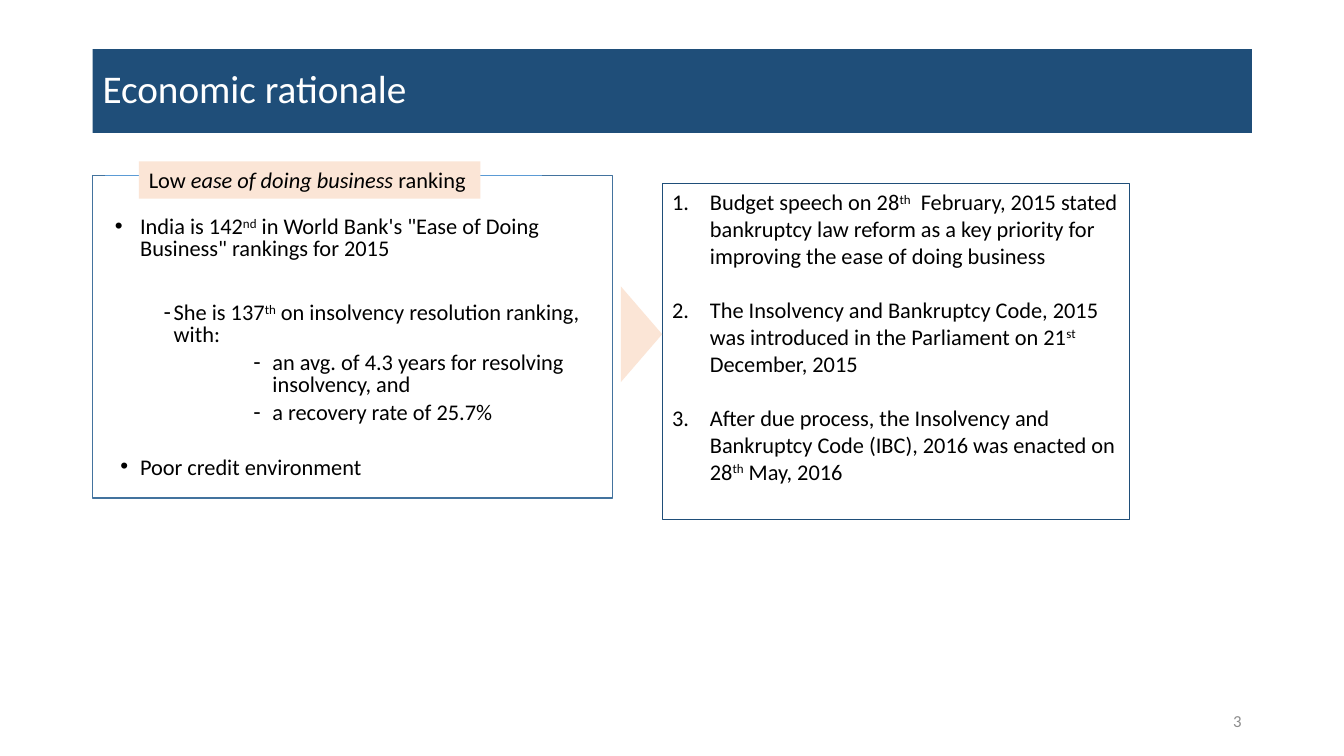
import pptx
import pptx.util
import pptx.dml.color
import pptx.enum.shapes
import pptx.enum.text
import lxml.etree
from dataclasses import dataclass

Pt = pptx.util.Pt
SHAPES = pptx.enum.shapes.MSO_SHAPE
ALIGN = pptx.enum.text.PP_ALIGN
ANCHOR = pptx.enum.text.MSO_ANCHOR


@dataclass(frozen=True)
class Theme:
    font: str = "Calibri"
    navy: str = "1F4E79"
    panel_line: str = "43739E"
    rule: str = "5B9BD5"
    peach: str = "FBE5D6"
    white: str = "FFFFFF"
    black: str = "000000"
    gray: str = "8C8C8C"
    title_size: float = 28
    body_size: float = 16
    number_size: float = 12


theme = Theme()
rgb = pptx.dml.color.RGBColor.from_string
qn = pptx.oxml.ns.qn


def add_box(left, top, width, height, kind=SHAPES.RECTANGLE, fill=None, line=None, weight=1):
    shape = slide.shapes.add_shape(kind, Pt(left), Pt(top), Pt(width), Pt(height))
    shape.shadow.inherit = False
    if fill:
        shape.fill.solid()
        shape.fill.fore_color.rgb = rgb(fill)
    else:
        shape.fill.background()
    if line:
        shape.line.color.rgb = rgb(line)
        shape.line.width = Pt(weight)
    else:
        shape.line.fill.background()
    return shape


def write(shape, paragraphs, size=theme.body_size, color=theme.black, anchor=ANCHOR.TOP, spacing=1.0):
    frame = shape.text_frame
    frame.word_wrap = True
    frame.vertical_anchor = anchor
    for index, (bullet, margin, hanging, before, pieces) in enumerate(paragraphs):
        paragraph = frame.paragraphs[0] if index == 0 else frame.add_paragraph()
        paragraph.alignment = ALIGN.LEFT
        paragraph.line_spacing = spacing
        paragraph.space_before = Pt(before)
        if bullet:
            properties = paragraph._p.get_or_add_pPr()
            properties.set("marL", str(Pt(margin)))
            properties.set("indent", str(-Pt(hanging)))
            if bullet == "1.":
                lxml.etree.SubElement(properties, qn("a:buAutoNum"), type="arabicPeriod")
            else:
                lxml.etree.SubElement(properties, qn("a:buFont"), typeface="Arial")
                lxml.etree.SubElement(properties, qn("a:buChar"), char=bullet)
        for text, style in pieces:
            run = paragraph.add_run()
            run.text = text
            run.font.name = theme.font
            run.font.size = Pt(size)
            run.font.color.rgb = rgb(color)
            if style == "italic":
                run.font.italic = True
            elif style == "superscript":
                run._r.get_or_add_rPr().set("baseline", "30000")


presentation = pptx.Presentation()
presentation.slide_width = Pt(960)
presentation.slide_height = Pt(540)
slide = presentation.slides.add_slide(presentation.slide_layouts[6])

add_box(66.2, 125.3, 371.5, 230.4, line=theme.panel_line)

top_rule = slide.shapes.add_connector(
    pptx.enum.shapes.MSO_CONNECTOR.STRAIGHT, Pt(75), Pt(125.3), Pt(387.4), Pt(125.3))
top_rule.line.color.rgb = rgb(theme.rule)
top_rule.line.width = Pt(0.5)
lxml.etree.SubElement(top_rule._element.spPr, qn("a:effectLst"))

title = add_box(66.2, 35, 828, 60, fill=theme.navy)
write(title, [(None, 0, 0, 0, [("Economic rationale", None)])],
      theme.title_size, theme.white, ANCHOR.MIDDLE, 0.9)

ranking = slide.shapes.add_textbox(Pt(75), Pt(152), Pt(353.5), Pt(168))
write(ranking, [
    ("•", 18, 18, 0, [("India is 142", None), ("nd", "superscript"),
                      (" in World Bank's \"Ease of Doing Business\" rankings for 2015", None)]),
    ("-", 42, 7.2, 30.6, [("She is 137", None), ("th", "superscript"),
                          (" on insolvency resolution ranking, with:", None)]),
    ("-", 112.5, 13.7, 5, [("an avg. of 4.3 years for resolving insolvency, and", None)]),
    ("-", 112.5, 13.7, 5, [("a recovery rate of 25.7%", None)]),
], spacing=0.8)

heading = add_box(99.2, 115.3, 244, 26.6, fill=theme.peach)
write(heading, [(None, 0, 0, 0, [("Low ", None), ("ease of doing business ", "italic"),
                                 ("ranking", None)])])
heading.text_frame.word_wrap = False

slide_number = slide.shapes.add_textbox(Pt(678), Pt(500.5), Pt(216), Pt(28.8))
write(slide_number, [(None, 0, 0, 0, [("3", None)])], theme.number_size, theme.gray, ANCHOR.MIDDLE)
slide_number.text_frame.paragraphs[0].alignment = ALIGN.RIGHT

credit = slide.shapes.add_textbox(Pt(79), Pt(319.8), Pt(308), Pt(26.6))
write(credit, [("•", 14, 14, 0, [("Poor credit environment", None)])])

timeline = add_box(473, 131, 334, 240, line=theme.navy, weight=0.75)
milestones = [
    ("Budget speech on 28", "th", "  February, 2015 stated bankruptcy law reform as a key priority "
                                  "for improving the ease of doing business"),
    ("The Insolvency and Bankruptcy Code, 2015 was introduced in the Parliament on 21", "st",
     " December, 2015"),
    ("After due process, the Insolvency and Bankruptcy Code (IBC), 2016 was enacted on 28", "th",
     " May, 2016"),
]
write(timeline, [
    ("1.", 27, 27, 19.5 if index else 0, [(start, None), (ordinal, "superscript"), (end, None)])
    for index, (start, ordinal, end) in enumerate(milestones)
])

pointer = add_box(424, 224, 68.4, 29.5, SHAPES.ISOSCELES_TRIANGLE, fill=theme.peach)
pointer.rotation = 90

presentation.save("out.pptx")
